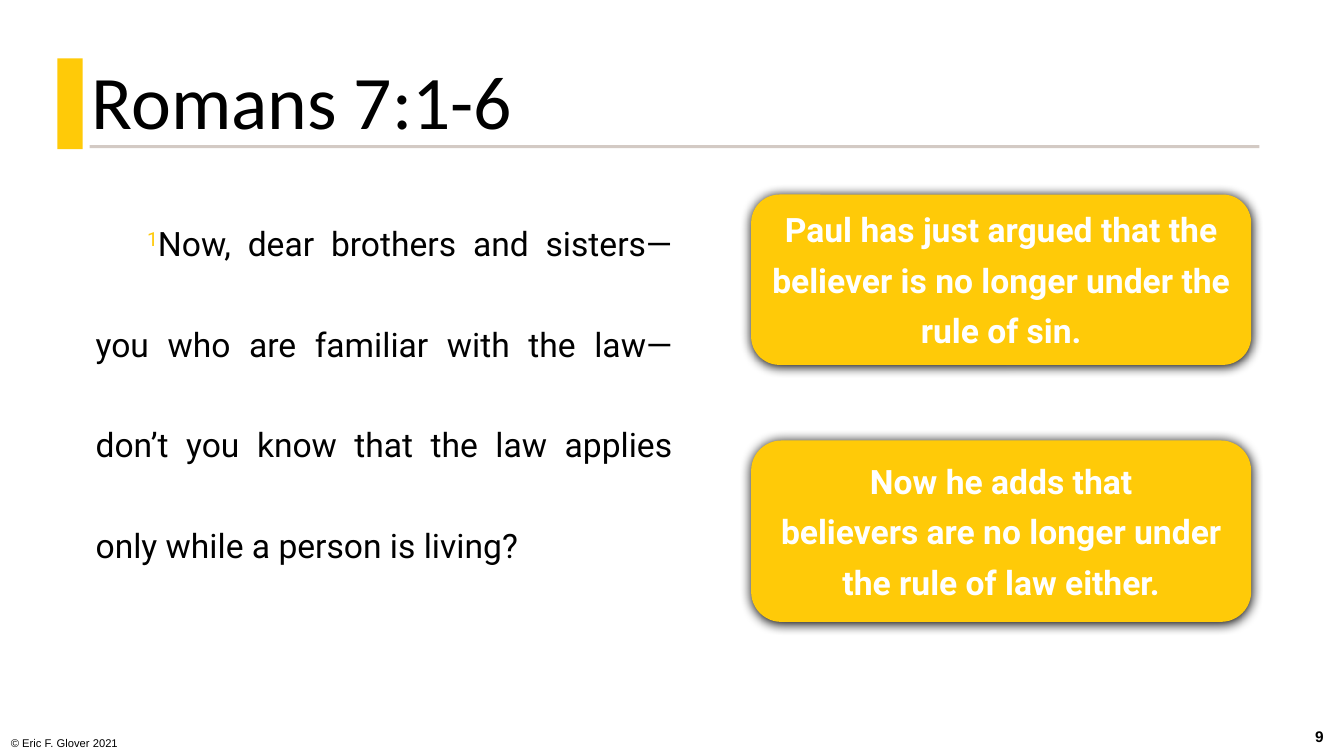
from lxml.etree import SubElement
from pptx import Presentation
from pptx.dml.color import RGBColor
from pptx.enum.shapes import MSO_SHAPE
from pptx.enum.text import MSO_ANCHOR, MSO_AUTO_SIZE, PP_ALIGN
from pptx.oxml.ns import qn
from pptx.util import Inches, Pt

BLACK = RGBColor(0x00, 0x00, 0x00)
WHITE = RGBColor(0xFF, 0xFF, 0xFF)
GOLD = RGBColor(0xFF, 0xCA, 0x08)
STONE = RGBColor(0xD3, 0xCA, 0xC4)

TITLE = "Romans 7:1-6"
VERSE_NUMBER = "1"
VERSE = (
    "Now, dear brothers and sisters—you who are familiar with the law—"
    "don’t you know that the law applies only while a person is living?"
)
ARGUMENTS = [
    ("Paul has just argued that the believer is no longer under the rule of sin.",
     (7.45, 1.93, 4.96, 1.69)),
    ("Now he adds that\nbelievers are no longer under the rule of law either.",
     (7.45, 4.37, 4.96, 1.8)),
]
FOOTERS = [
    ("9", (12.84, 7.11, 0.49, 0.4), 11, True,
     {"alignment": PP_ALIGN.CENTER}, MSO_ANCHOR.MIDDLE),
    ("© Eric F. Glover 2021", (0.01, 7.21, 1.57, 0.28), 8, False,
     {"alignment": PP_ALIGN.LEFT}, MSO_ANCHOR.BOTTOM),
]
RULE = (0.89, 1.44, 11.6, 0.03)
ACCENT = (0.57, 0.58, 0.25, 0.9)
PASSAGE = (0.85, 1.61, 5.82, 5.39)
TITLE_PLACE = (0.81, 0.22, 11.84, 1.28)


def apply(target, values):
    for name, value in values.items():
        setattr(target, name, value)


def place(box):
    return [Inches(length) for length in box]


def write(shape, text, font, color, paragraph_format, anchor, insets=(0.1, 0.05, 0.1, 0.05)):
    frame = shape.text_frame
    sides = ("margin_left", "margin_top", "margin_right", "margin_bottom")
    apply(frame, dict(zip(sides, place(insets))))
    apply(frame, {"word_wrap": True, "auto_size": MSO_AUTO_SIZE.NONE,
                  "vertical_anchor": anchor})
    paragraph = frame.paragraphs[0]
    paragraph.text = text
    apply(paragraph, paragraph_format)
    for run in paragraph.runs:
        style(run, font, color)
    return paragraph


def style(run, font, color):
    apply(run.font, font)
    run.font.color.rgb = color


def add_block(slide, kind, box, color):
    block = slide.shapes.add_shape(kind, *place(box))
    block.shadow.inherit = False
    block.fill.solid()
    block.fill.fore_color.rgb = color
    block.line.fill.background()
    return block


def add_glow(block):
    effects = block._element.spPr.find(qn("a:effectLst"))
    shadow = SubElement(effects, qn("a:outerShdw"), blurRad=str(Pt(8.5)),
                        dist=str(Pt(1)), dir="5400000", algn="ctr", rotWithShape="0")
    SubElement(shadow, qn("a:srgbClr"), val=str(BLACK))


def main():
    deck = Presentation()
    apply(deck, {"slide_width": Inches(13.33), "slide_height": Inches(7.5)})
    slide = deck.slides.add_slide(deck.slide_layouts[5])

    for text, box, size, bold, paragraph_format, anchor in FOOTERS:
        footer = slide.shapes.add_textbox(*place(box))
        write(footer, text, {"name": "Arial", "size": Pt(size), "bold": bold},
              BLACK, paragraph_format, anchor)

    title = slide.shapes.title
    apply(title, dict(zip(("left", "top", "width", "height"), place(TITLE_PLACE))))
    write(title, TITLE, {"name": "Calibri", "size": Pt(54)}, BLACK,
          {"alignment": PP_ALIGN.LEFT, "line_spacing": 0.9}, MSO_ANCHOR.BOTTOM)

    add_block(slide, MSO_SHAPE.RECTANGLE, RULE, STONE)
    add_block(slide, MSO_SHAPE.RECTANGLE, ACCENT, GOLD)

    passage = add_block(slide, MSO_SHAPE.RECTANGLE, PASSAGE, WHITE)
    verse_font = {"name": "Roboto", "size": Pt(24)}
    verse = write(passage, VERSE_NUMBER, verse_font, GOLD,
                  {"alignment": PP_ALIGN.JUSTIFY, "line_spacing": 2.5, "space_after": Pt(6)},
                  MSO_ANCHOR.TOP, (0.1, 0, 0, 0.05))
    verse._p.get_or_add_pPr().set("indent", str(Inches(0.51)))
    verse.runs[0]._r.get_or_add_rPr().set("baseline", "30000")
    words = verse.add_run()
    words.text = VERSE
    style(words, verse_font, BLACK)

    for text, box in ARGUMENTS:
        argument = add_block(slide, MSO_SHAPE.ROUNDED_RECTANGLE, box, GOLD)
        add_glow(argument)
        write(argument, text, {**verse_font, "bold": True}, WHITE,
              {"alignment": PP_ALIGN.CENTER, "line_spacing": 1.25},
              MSO_ANCHOR.MIDDLE, (0.1, 0, 0.1, 0.1))

    deck.save("out.pptx")


if __name__ == "__main__":
    main()
